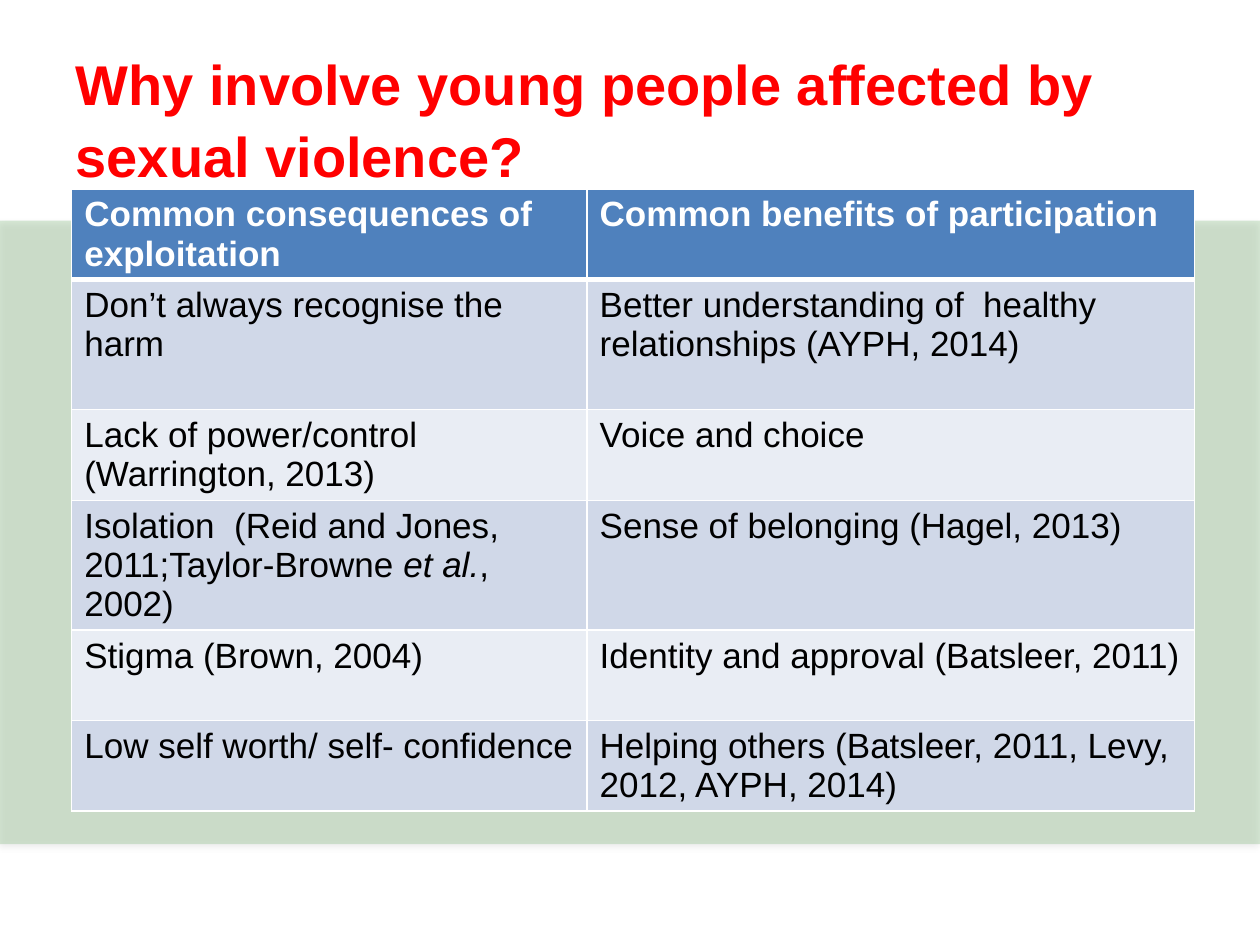
from lxml import etree
from pptx import Presentation
from pptx.dml.color import RGBColor
from pptx.enum import shapes, text
from pptx.oxml import parse_xml
from pptx.oxml.ns import nsdecls, qn
from pptx.util import Pt

HEADER = ("Common consequences of exploitation", "Common benefits of participation")
FINDINGS = [
    ("Don’t always recognise the harm",
     "Better understanding of  healthy relationships (AYPH, 2014)"),
    ("Lack of power/control (Warrington, 2013)", "Voice and choice"),
    ("Isolation  (Reid and Jones, 2011;Taylor-Browne *et al.*, 2002)",
     "Sense of belonging (Hagel, 2013)"),
    ("Stigma (Brown, 2004)", "Identity and approval (Batsleer, 2011)"),
    ("Low self worth/ self- confidence",
     "Helping others (Batsleer, 2011, Levy, 2012, AYPH, 2014)"),
]
COLUMN_WIDTHS = (294.5, 347)
TWO_LINES, THREE_LINES = 51.6, 74.2
ROW_HEIGHTS = (TWO_LINES, THREE_LINES, TWO_LINES, THREE_LINES, TWO_LINES, TWO_LINES)


def color(value):
    """Turn a hex string into a colour."""
    return RGBColor.from_string(value)


class Deck:
    """Hold the style and the current slide."""

    font = "Arial"
    heading, ink, white = "FF0000", "000000", "FFFFFF"
    header_fill, bands = "4F81BD", ("D0D8E8", "E9EDF4")
    band_fill = "3F9538"

    def __init__(self, width, height):
        """Start a presentation with one title-only slide."""
        self.presentation = Presentation()
        self.presentation.slide_width, self.presentation.slide_height = Pt(width), Pt(height)
        self.slide = self.presentation.slides.add_slide(self.presentation.slide_layouts[5])

    def style(self, paragraph, size, ink, bold):
        """Set the font of a whole paragraph."""
        font = paragraph.font
        font.name, font.size, font.bold = self.font, Pt(size), bold
        font.color.rgb = color(ink)

    def title(self, wording, left, top, width, height):
        """Place and format the title."""
        title = self.slide.shapes.title
        title.left, title.top, title.width, title.height = map(Pt, (left, top, width, height))
        frame = title.text_frame
        frame.text, frame.word_wrap = wording, True
        frame.vertical_anchor = text.MSO_ANCHOR.MIDDLE
        heading = frame.paragraphs[0]
        heading.alignment = text.PP_ALIGN.LEFT
        heading.line_spacing = 1.07
        self.style(heading, 32, self.heading, True)

    def backdrop(self, left, top, width, height):
        """Draw the translucent band behind everything else."""
        band = self.slide.shapes.add_shape(
            shapes.MSO_SHAPE.RECTANGLE, *map(Pt, (left, top, width, height)))
        band.fill.solid()
        band.fill.fore_color.rgb = color(self.band_fill)
        band.line.fill.background()
        band.shadow.inherit = False
        properties = band._element.spPr
        tint = properties.find(qn("a:solidFill"))[0]
        etree.SubElement(tint, qn("a:alpha"), val="20000")
        properties.find(qn("a:effectLst")).append(parse_xml(
            f'<a:outerShdw {nsdecls("a")} blurRad="{Pt(3.1)}" dist="{Pt(1.8)}" dir="5400000" '
            'rotWithShape="0"><a:srgbClr val="000000"><a:alpha val="35000"/></a:srgbClr>'
            '</a:outerShdw>'))
        band._element.getparent().insert(2, band._element)

    def borders(self, cell, **widths):
        """Draw white cell borders, one point wide unless given."""
        for index, side in enumerate("LRTB"):
            cell._tc.get_or_add_tcPr().insert(index, parse_xml(
                f'<a:ln{side} {nsdecls("a")} w="{Pt(widths.get(side, 1))}"><a:solidFill>'
                f'<a:srgbClr val="{self.white}"/></a:solidFill></a:ln{side}>'))

    def cell(self, cell, wording, row):
        """Fill one cell, with italics between asterisks."""
        paragraph = cell.text_frame.paragraphs[0]
        for index, part in enumerate(wording.split("*")):
            run = paragraph.add_run()
            run.text = part
            if index % 2:
                run.font.italic = True
        is_header = row == 0
        self.style(paragraph, 20, self.white if is_header else self.ink, is_header)
        cell.fill.solid()
        cell.fill.fore_color.rgb = color(
            self.header_fill if is_header else self.bands[(row - 1) % 2])
        self.borders(cell, **{0: {"B": 3}, 1: {"T": 3}}.get(row, {}))

    def table(self, rows, left, top, widths, heights):
        """Add the table with a header row and banded body."""
        grid = self.slide.shapes.add_table(
            len(rows), len(widths), Pt(left), Pt(top), Pt(sum(widths)), Pt(sum(heights))).table
        for column, width in zip(grid.columns, widths):
            column.width = Pt(width)
        for row, (wordings, height) in enumerate(zip(rows, heights)):
            grid.rows[row].height = Pt(height)
            for column, wording in enumerate(wordings):
                self.cell(grid.cell(row, column), wording, row)


def main():
    """Build and save the slide."""
    deck = Deck(720, 540)
    deck.backdrop(0, 126, 720, 356.4)
    deck.title("Why involve young people affected by sexual violence?", 36, 21.6, 648, 90)
    deck.table([HEADER, *FINDINGS], 41, 108, COLUMN_WIDTHS, ROW_HEIGHTS)
    deck.presentation.save("out.pptx")


if __name__ == "__main__":
    main()
